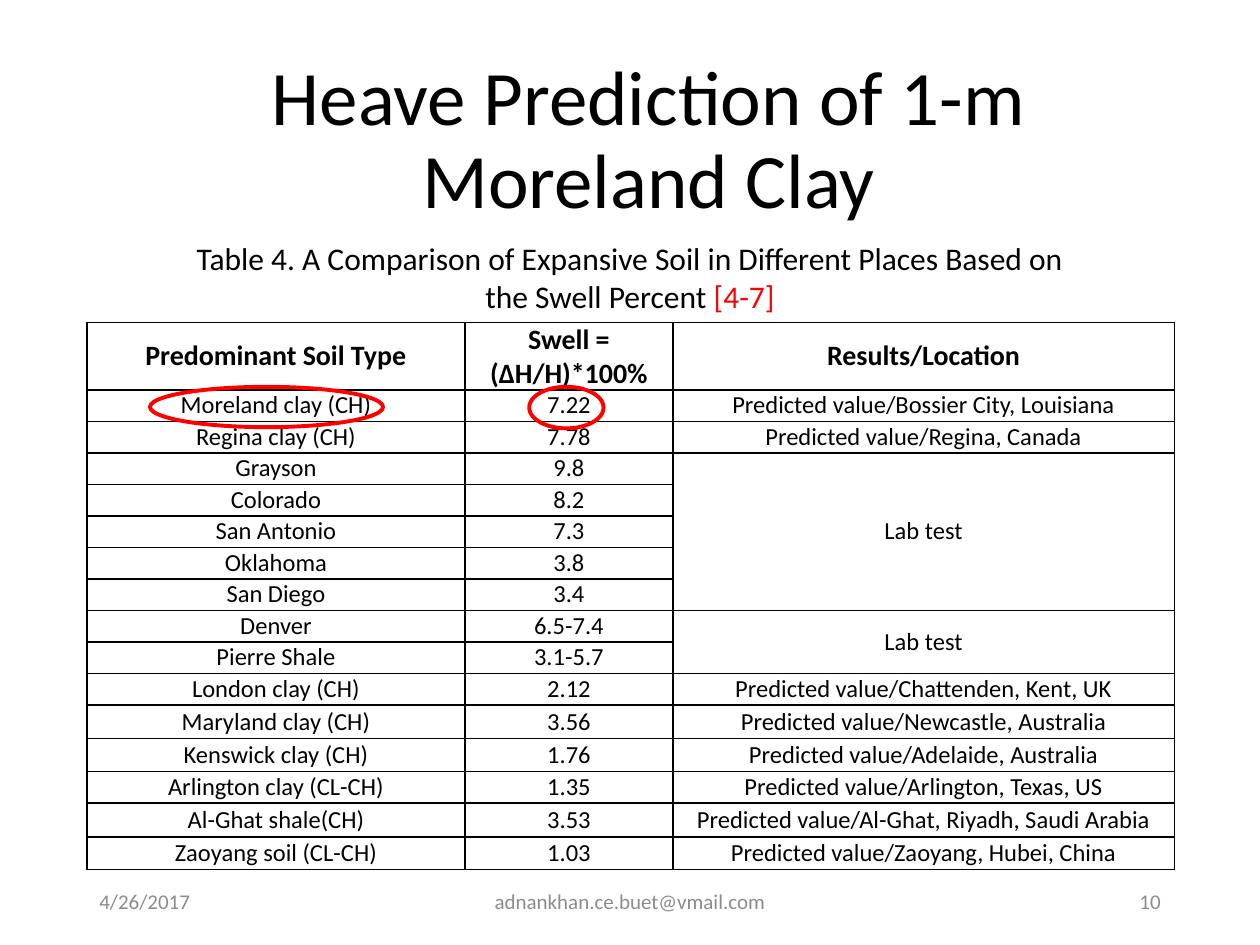
import pptx
import pptx.util
import pptx.dml.color
import pptx.enum.shapes
import pptx.enum.text
import pptx.oxml

Inches = pptx.util.Inches
Pt = pptx.util.Pt
Align = pptx.enum.text.PP_ALIGN
Anchor = pptx.enum.text.MSO_ANCHOR
RGBColor = pptx.dml.color.RGBColor

BLACK = RGBColor(0, 0, 0)
RED = RGBColor(0xFF, 0, 0)
GRAY = RGBColor(0x8C, 0x8C, 0x8C)

FONT = "Calibri"
LEFT = 0.69
WIDTHS = [3, 1.65, 3.98]
HEAD = 0.51
ROW = 0.25
TALL = {11: 0.27, 12: 0.26, 14: 0.27, 15: 0.26}
SPANS = [(3, 7), (8, 9)]  # first and last row of merged results

ROWS = [
    ("Predominant Soil Type", "Swell = (ΔH/H)*100%", "Results/Location"),
    ("Moreland clay (CH)", "7.22", "Predicted value/Bossier City, Louisiana"),
    ("Regina clay (CH)", "7.78", "Predicted value/Regina, Canada"),
    ("Grayson", "9.8", "Lab test"),
    ("Colorado", "8.2", ""),
    ("San Antonio", "7.3", ""),
    ("Oklahoma", "3.8", ""),
    ("San Diego", "3.4", ""),
    ("Denver", "6.5-7.4", "Lab test"),
    ("Pierre Shale", "3.1-5.7", ""),
    ("London clay (CH)", "2.12", "Predicted value/Chattenden, Kent, UK"),
    ("Maryland clay (CH)", "3.56", "Predicted value/Newcastle, Australia"),
    ("Kenswick clay (CH)", "1.76", "Predicted value/Adelaide, Australia"),
    ("Arlington clay (CL-CH)", "1.35", "Predicted value/Arlington, Texas, US"),
    ("Al-Ghat shale(CH)", "3.53", "Predicted value/Al-Ghat, Riyadh, Saudi Arabia"),
    ("Zaoyang soil (CL-CH)", "1.03", "Predicted value/Zaoyang, Hubei, China"),
]


def style(para, size, color=BLACK, align=Align.CENTER, bold=False):
    para.alignment = align
    for run in para.runs:
        run.font.name = FONT
        run.font.size = Pt(size)
        run.font.bold = bold
        run.font.color.rgb = color


def add_title(slide, text):
    title = slide.shapes.title
    title.left, title.top = Inches(0.98), Inches(0.4)
    title.width, title.height = Inches(8.34), Inches(1.45)
    frame = title.text_frame
    frame.text = text
    frame.auto_size = pptx.enum.text.MSO_AUTO_SIZE.NONE
    frame.vertical_anchor = Anchor.MIDDLE
    frame.paragraphs[0].line_spacing = 0.9
    style(frame.paragraphs[0], 44)


def add_text(slide, box, text, size, color, align, anchor):
    frame = slide.shapes.add_textbox(*map(Inches, box)).text_frame
    frame.word_wrap = True
    frame.vertical_anchor = anchor
    frame.text = text
    style(frame.paragraphs[0], size, color, align)
    return frame.paragraphs[0]


def add_lines(cell):
    # Borders come before the fill in the cell properties
    props = cell._tc.get_or_add_tcPr()
    for spot, side in enumerate(("lnL", "lnR", "lnT", "lnB")):
        line = pptx.oxml.parse_xml(
            f'<a:{side} xmlns:a="http://schemas.openxmlformats.org/drawingml/2006/main"'
            f' w="{Pt(1)}"><a:solidFill><a:srgbClr val="{BLACK}"/></a:solidFill></a:{side}>')
        props.insert(spot, line)


def fill_cell(cell, text, head):
    cell.fill.background()
    cell.vertical_anchor = Anchor.MIDDLE
    cell.margin_left = cell.margin_right = Inches(0.07)
    cell.margin_top = cell.margin_bottom = 0
    cell.text_frame.text = text
    para = cell.text_frame.paragraphs[0]
    size = 16 if head else 14
    para.font.size = Pt(size)
    style(para, size, bold=head)
    add_lines(cell)


def add_table(slide):
    highs = [HEAD] + [TALL.get(i, ROW) for i in range(1, len(ROWS))]
    box = (LEFT, 2.56, sum(WIDTHS), sum(highs))
    table = slide.shapes.add_table(len(ROWS), len(WIDTHS), *map(Inches, box)).table
    table.first_row = table.horz_banding = False
    for col, width in zip(table.columns, WIDTHS):
        col.width = Inches(width)
    for i, (texts, high) in enumerate(zip(ROWS, highs)):
        table.rows[i].height = Inches(high)
        for j, text in enumerate(texts):
            fill_cell(table.cell(i, j), text, i == 0)
    for first, last in SPANS:
        table.cell(first, 2).merge(table.cell(last, 2))


def add_ring(slide, box):
    ring = slide.shapes.add_shape(
        pptx.enum.shapes.MSO_SHAPE.OVAL, *map(Inches, box))
    ring.shadow.inherit = False
    ring.fill.background()
    ring.line.color.rgb = RED
    ring.line.width = Pt(2.25)


def main():
    deck = pptx.Presentation()
    deck.slide_width, deck.slide_height = Inches(10), Inches(7.5)
    slide = deck.slides.add_slide(deck.slide_layouts[5])

    # Title and table caption
    add_title(slide, "Heave Prediction of 1-m Moreland Clay")
    note = add_text(
        slide, (1.33, 1.85, 7.34, 0.71),
        "Table 4. A Comparison of Expansive Soil in Different Places "
        "Based on the Swell Percent ", 18, BLACK, Align.CENTER, Anchor.TOP)
    note.add_run().text = "[4-7]"
    style(note, 18)
    note.runs[-1].font.color.rgb = RED

    # Table with the key values ringed
    add_table(slide)
    add_ring(slide, (1.19, 3.07, 1.85, 0.32))
    add_ring(slide, (4.2, 3.07, 0.59, 0.33))

    # Footer
    for left, width, text, align in (
            (LEFT, 2.25, "4/26/2017", Align.LEFT),
            (3.31, 3.38, "adnankhan.ce.buet@vmail.com", Align.CENTER),
            (7.06, 2.25, "10", Align.RIGHT)):
        add_text(slide, (left, 6.95, width, 0.4), text, 12, GRAY, align, Anchor.MIDDLE)

    deck.save("out.pptx")


if __name__ == "__main__":
    main()
